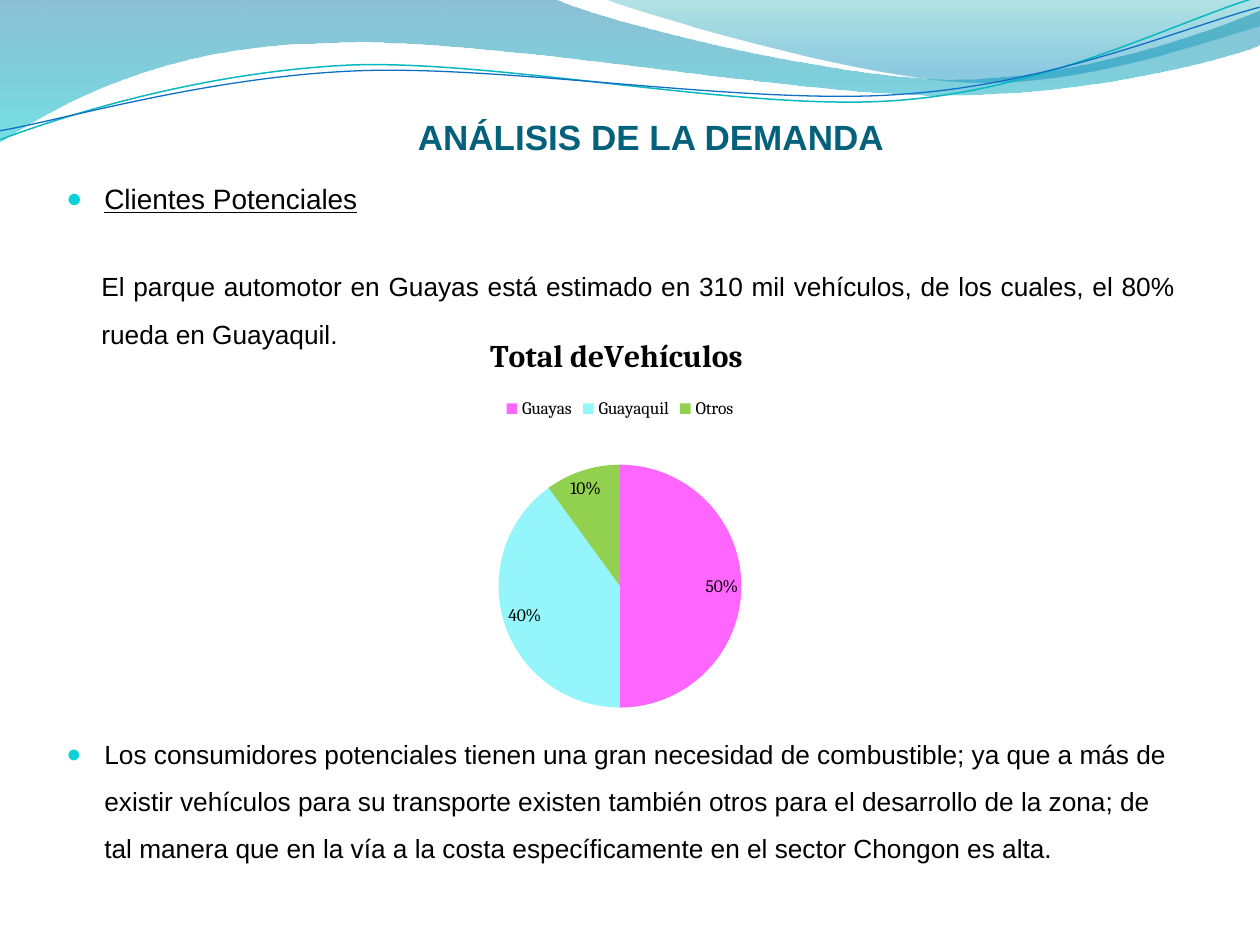
from dataclasses import dataclass

from lxml import etree
from pptx import Presentation
from pptx.chart.data import CategoryChartData
from pptx.dml.color import RGBColor
from pptx.enum.chart import XL_CHART_TYPE, XL_LABEL_POSITION, XL_LEGEND_POSITION
from pptx.enum.text import MSO_ANCHOR, MSO_AUTO_SIZE, PP_ALIGN
from pptx.oxml.ns import qn
from pptx.util import Emu, Pt

PIE = XL_CHART_TYPE.PIE
BEST_FIT = XL_LABEL_POSITION.BEST_FIT
LEGEND_TOP = XL_LEGEND_POSITION.TOP
ANCHOR_BOTTOM = MSO_ANCHOR.BOTTOM
NO_AUTOFIT = MSO_AUTO_SIZE.NONE
CENTER, JUSTIFY, LEFT = PP_ALIGN.CENTER, PP_ALIGN.JUSTIFY, PP_ALIGN.LEFT

EMU_PER_PX = 914400 / 126
LINE_ROTATION = 357.3


@dataclass(frozen=True)
class Theme:
    """Fonts, colours and type sizes of the slide."""
    text_font: str = "Arial"
    chart_font: str = "Cambria"
    title: str = "04617B"
    text: str = "000000"
    bullet: str = "0BD0D9"
    teal_line: str = "0AB8BF"
    blue_line: str = "0F6FC6"
    wide_wave: tuple = ((0, "0074A1", 45), (1, "00C6CF", 55))
    right_wave: tuple = ((0, "00A1A9", 30), (0.8, "008BBF", 45))
    slices: tuple = ("FF66FF", "94F5FA", "92D050")
    title_size: int = 20
    heading_size: int = 16
    body_size: int = 15
    chart_title_size: int = 18
    chart_size: int = 10


THEME = Theme()


def px(value):
    """Turn px into EMU."""
    return Emu(round(value * EMU_PER_PX))


def color(value):
    """Turn a hex string into a colour."""
    return RGBColor.from_string(value)


def style_font(font, name, size, value, bold=False):
    """Set face, size, colour and weight of a font."""
    font.name, font.size, font.bold = name, Pt(size), bold
    font.color.rgb = color(value)


def add_outline(slide, box, start, segments, close):
    """Add a freeform; a segment of one point is straight, of three a curve."""
    left, top = box[:2]
    points = [start] + [point for segment in segments for point in segment]
    placed = [(px(x + left), px(y + top)) for x, y in points]
    builder = slide.shapes.build_freeform(*placed[0], scale=1.0)
    builder.add_line_segments(placed[1:], close=close)
    shape = builder.convert_to_shape()
    shape.shadow.inherit = False
    strokes = iter(list(shape.element.iter(qn("a:lnTo"))))
    for segment in segments:
        group = [next(strokes) for _ in segment]
        if len(group) == 3:
            group[0].addprevious(curve := etree.Element(qn("a:cubicBezTo")))
            for stroke in group:
                curve.append(stroke[0])
                stroke.getparent().remove(stroke)
    return shape


def add_wave(slide, box, start, segments, stops):
    """Add a closed wave with a translucent vertical gradient."""
    shape = add_outline(slide, box, start, segments, True)
    shape.line.fill.background()
    shape.fill.gradient()
    shape.fill.gradient_angle = 270
    for stop, (position, value, _) in zip(shape.fill.gradient_stops, stops):
        stop.position = position
        stop.color.rgb = color(value)
    for node, (_, _, opacity) in zip(shape.element.iter(qn("a:srgbClr")), stops):
        etree.SubElement(node, qn("a:alpha"), val=str(opacity * 1000))


def add_curve(slide, box, start, segments, value, width):
    """Add an open curved line, slightly turned."""
    shape = add_outline(slide, box, start, segments, False)
    shape.rotation = LINE_ROTATION
    shape.fill.background()
    shape.line.color.rgb = color(value)
    shape.line.width = Pt(width)


def add_header(slide, box):
    """Draw the waves and the two lines along the top."""
    add_wave(slide, box, (0, 0), [
        ((555, -1),),
        ((600, 21), (837, 79), (955, 79)), ((1075, 79), (1207, 33), (1260, 11)),
        ((1261, 45),),
        ((1239, 55), (1096, 96), (940, 95)), ((784, 95), (481, 35), (324, 43)),
        ((163, 45), (58, 105), (-1, 142))], THEME.wide_wave)
    add_wave(slide, box, (604, -1), [
        ((641, 14), (859, 78), (969, 82)), ((1079, 87), (1211, 40), (1260, 26)),
        ((1260, 0),)], THEME.right_wave)
    add_curve(slide, box, (-2, 110), [
        ((59, 90), (200, 52), (350, 52)), ((499, 53), (745, 118), (897, 113)),
        ((1048, 109), (1184, 45), (1260, 27))], THEME.teal_line, 0.85)
    add_curve(slide, box, (-2, 101), [
        ((58, 94), (207, 57), (357, 58)), ((508, 59), (751, 112), (902, 107)),
        ((1052, 104), (1187, 53), (1262, 37))], THEME.blue_line, 0.75)


def add_title(slide, box, text):
    """Place and format the title placeholder in front of the header."""
    title = slide.shapes.title
    slide.shapes.element.append(title.element)
    title.left, title.top, title.width, title.height = map(px, box)
    frame = title.text_frame
    frame.auto_size, frame.vertical_anchor = NO_AUTOFIT, ANCHOR_BOTTOM
    frame.margin_left = frame.margin_right = frame.margin_bottom = 0
    frame.margin_top = px(6)
    paragraph = frame.paragraphs[0]
    paragraph.alignment = CENTER
    run = paragraph.add_run()
    run.text = text
    style_font(run.font, THEME.text_font, THEME.title_size, THEME.title, True)


def set_indent(paragraph, margin, bullet):
    """Set the left margin and, if asked, a hanging round bullet."""
    properties = paragraph._p.get_or_add_pPr()
    properties.set("marL", str(px(margin)))
    properties.set("indent", str(-px(margin) if bullet else 0))
    if bullet:
        tint = etree.SubElement(properties, qn("a:buClr"))
        etree.SubElement(tint, qn("a:srgbClr"), val=THEME.bullet)
        etree.SubElement(properties, qn("a:buSzPct"), val="95000")
        etree.SubElement(properties, qn("a:buFont"), typeface=THEME.text_font)
        etree.SubElement(properties, qn("a:buChar"), char="●")


def add_body(slide, box, items):
    """Write the body paragraphs, leaving the given space before each."""
    frame = slide.shapes.add_textbox(*map(px, box)).text_frame
    frame.word_wrap = True
    for index, (text, size, align, spacing, before, margin, bullet) in enumerate(items):
        paragraph = frame.add_paragraph() if index else frame.paragraphs[0]
        paragraph.alignment = align
        paragraph.line_spacing = spacing
        paragraph.space_before = Pt(before)
        set_indent(paragraph, margin, bullet)
        run = paragraph.add_run()
        run.text = text
        style_font(run.font, THEME.text_font, size, THEME.text)
        run.font.underline = index == 0


def add_pie(slide, box, name, values):
    """Add the pie chart with its title, legend and percentages."""
    data = CategoryChartData()
    data.categories = list(values)
    data.add_series(name, list(values.values()))
    chart = slide.shapes.add_chart(PIE, *map(px, box), data).chart
    style_font(chart.font, THEME.chart_font, THEME.chart_size, THEME.text)
    chart.has_title = True
    run = chart.chart_title.text_frame.paragraphs[0].add_run()
    run.text = name
    style_font(run.font, THEME.chart_font, THEME.chart_title_size, THEME.text, True)
    chart.chart_title.include_in_layout = False
    chart.has_legend = True
    chart.legend.position = LEGEND_TOP
    chart.legend.include_in_layout = False
    plot = chart.plots[0]
    plot.vary_by_categories = True
    for index, value in enumerate(THEME.slices):
        fill = plot.series[0].points[index].format.fill
        fill.solid()
        fill.fore_color.rgb = color(value)
    labels = plot.series[0].data_labels
    labels.show_percentage, labels.show_value = True, False
    labels.number_format, labels.number_format_is_linked = "0%", False
    labels.position = BEST_FIT


def main():
    """Build and save the slide."""
    presentation = Presentation()
    presentation.slide_width, presentation.slide_height = px(1260), px(945)
    slide = presentation.slides.add_slide(presentation.slide_layouts[5])
    add_header(slide, (0, 0, 1260, 142))
    add_title(slide, (84, 96, 1134, 62), "ANÁLISIS DE LA DEMANDA")
    add_body(slide, (54, 175, 1134, 714), [
        ("Clientes Potenciales", THEME.heading_size, LEFT, 1.0, 0, 38, True),
        ("El parque automotor en Guayas está estimado en 310 mil vehículos, de los cuales, "
         "el 80% rueda en Guayaquil. ", THEME.body_size, JUSTIFY, 1.5, 23, 35, False),
        ("Los consumidores potenciales tienen una gran necesidad de combustible; ya que a más "
         "de existir vehículos para su transporte existen también otros para el desarrollo de "
         "la zona; de tal manera que en la vía a la costa específicamente en el sector Chongon "
         "es alta.", THEME.body_size, LEFT, 1.5, 213, 38, True)])
    add_pie(slide, (283, 314, 674, 411), "Total deVehículos ",
            {"Guayas": 50, "Guayaquil": 40, "Otros": 10})
    presentation.save("out.pptx")


if __name__ == "__main__":
    main()
